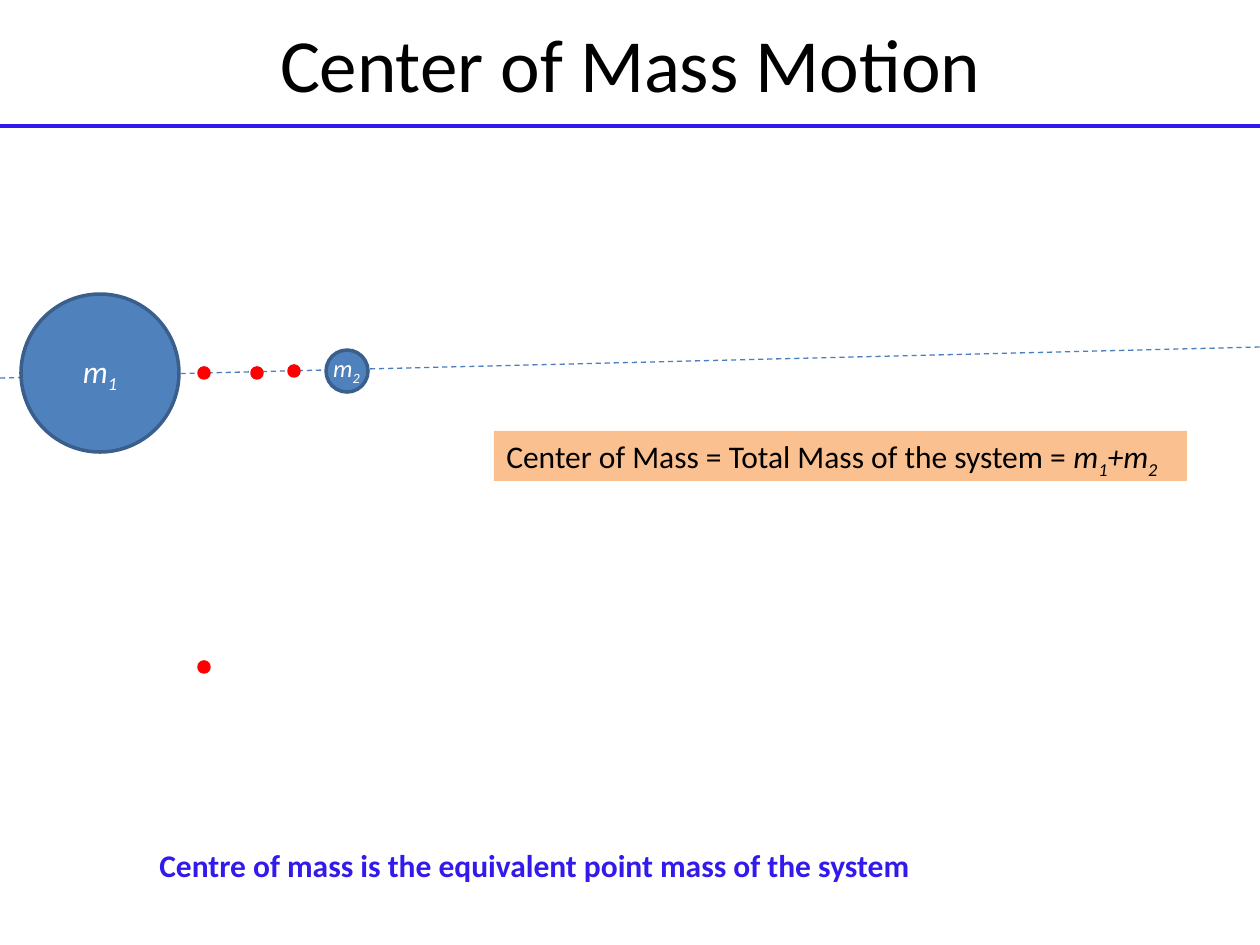
from lxml import etree
from pptx import Presentation
from pptx.dml.color import RGBColor
from pptx.enum.dml import MSO_LINE
from pptx.enum.shapes import MSO_CONNECTOR, MSO_SHAPE
from pptx.enum.text import MSO_ANCHOR, MSO_AUTO_SIZE, PP_ALIGN
from pptx.oxml.ns import qn
from pptx.util import Emu, Pt

STRAIGHT = MSO_CONNECTOR.STRAIGHT
OVAL = MSO_SHAPE.OVAL
RECTANGLE = MSO_SHAPE.RECTANGLE
DASH = MSO_LINE.DASH
TOP, MIDDLE = MSO_ANCHOR.TOP, MSO_ANCHOR.MIDDLE
LEFT, CENTER = PP_ALIGN.LEFT, PP_ALIGN.CENTER
GROW, FIXED = MSO_AUTO_SIZE.SHAPE_TO_FIT_TEXT, MSO_AUTO_SIZE.NONE

PX = 914400 / 126
THEME = {
    "font": "Calibri",
    "black": RGBColor.from_string("000000"),
    "white": RGBColor.from_string("FFFFFF"),
    "accent": RGBColor.from_string("331AEC"),
    "axis": RGBColor.from_string("4B7EBC"),
    "mass": RGBColor.from_string("4F81BD"),
    "mass_edge": RGBColor.from_string("3A5F8C"),
    "dot": RGBColor.from_string("FF0000"),
    "callout": RGBColor.from_string("FAC090"),
    "title_size": Pt(42.9),
    "body_size": Pt(18),
    "small_size": Pt(14),
}


def px(*lengths):
    return [Emu(round(n * PX)) for n in lengths]


def write(sp, parts, size, color, align=LEFT, anchor=TOP, auto_size=GROW):
    tf = sp.text_frame
    tf.word_wrap = auto_size != GROW
    tf.auto_size = auto_size
    tf.vertical_anchor = anchor
    p = tf.paragraphs[0]
    p.alignment = align
    for text, style in parts:
        r = p.add_run()
        r.text = text
        r.font.name = THEME["font"]
        r.font.size = THEME[size]
        r.font.color.rgb = THEME[color]
        r.font.bold = style == "bold"
        r.font.italic = style in ("italic", "sub")
        if style == "sub":
            r._r.get_or_add_rPr().set("baseline", "-25000")


prs = Presentation()
prs.slide_width, prs.slide_height = px(1260, 945)
s = prs.slides.add_slide(prs.slide_layouts[5])

title = s.shapes.title
title.left, title.top, title.width, title.height = px(63, 21, 1134, 98)
write(title, [("Center of Mass Motion", "plain")], "title_size", "black", CENTER, TOP, FIXED)
title.text_frame.paragraphs[0].line_spacing = 0.9

for y1, y2, color, width, dash in [
    (126, 126, "accent", 2.25, None),
    (378, 347, "axis", 0.75, DASH),
]:
    line = s.shapes.add_connector(STRAIGHT, *px(0, y1, 1260, y2))
    line.line.color.rgb = THEME[color]
    line.line.width = Pt(width)
    line.line.dash_style = dash
    etree.SubElement(line._element.spPr, qn("a:effectLst"))

circles = []
for x, y, size, fill, edge in [
    (21, 294, 158, "mass", "mass_edge"),
    (326, 350, 42, "mass", "mass_edge"),
    (252, 368, 10, "dot", "dot"),
    (289, 366, 10, "dot", "dot"),
    (199, 368, 10, "dot", "dot"),
    (199, 662, 10, "dot", "dot"),
]:
    sp = s.shapes.add_shape(OVAL, *px(x, y, size, size))
    sp.shadow.inherit = False
    sp.fill.solid()
    sp.fill.fore_color.rgb = THEME[fill]
    sp.line.color.rgb = THEME[edge]
    sp.line.width = Pt(2)
    circles.append(sp)
write(circles[0], [("m", "italic"), ("1", "sub")], "body_size", "white", CENTER, MIDDLE, FIXED)

callout = s.shapes.add_shape(RECTANGLE, *px(494, 431, 693, 50))
callout.shadow.inherit = False
callout.fill.solid()
callout.fill.fore_color.rgb = THEME["callout"]
callout.line.fill.background()
formula = [
    ("Center of Mass = Total Mass of the system = ", "plain"),
    ("m", "italic"),
    ("1", "sub"),
    ("+m", "italic"),
    ("2", "sub"),
]
write(callout, formula, "body_size", "black")

summary = s.shapes.add_textbox(*px(147, 840, 782, 50))
write(
    summary,
    [("Centre of mass is the equivalent point mass of the system", "bold")],
    "body_size",
    "accent",
)

label = s.shapes.add_textbox(*px(320, 347, 53, 43))
write(label, [("m", "italic"), ("2", "sub")], "small_size", "white", CENTER)

prs.save("out.pptx")
